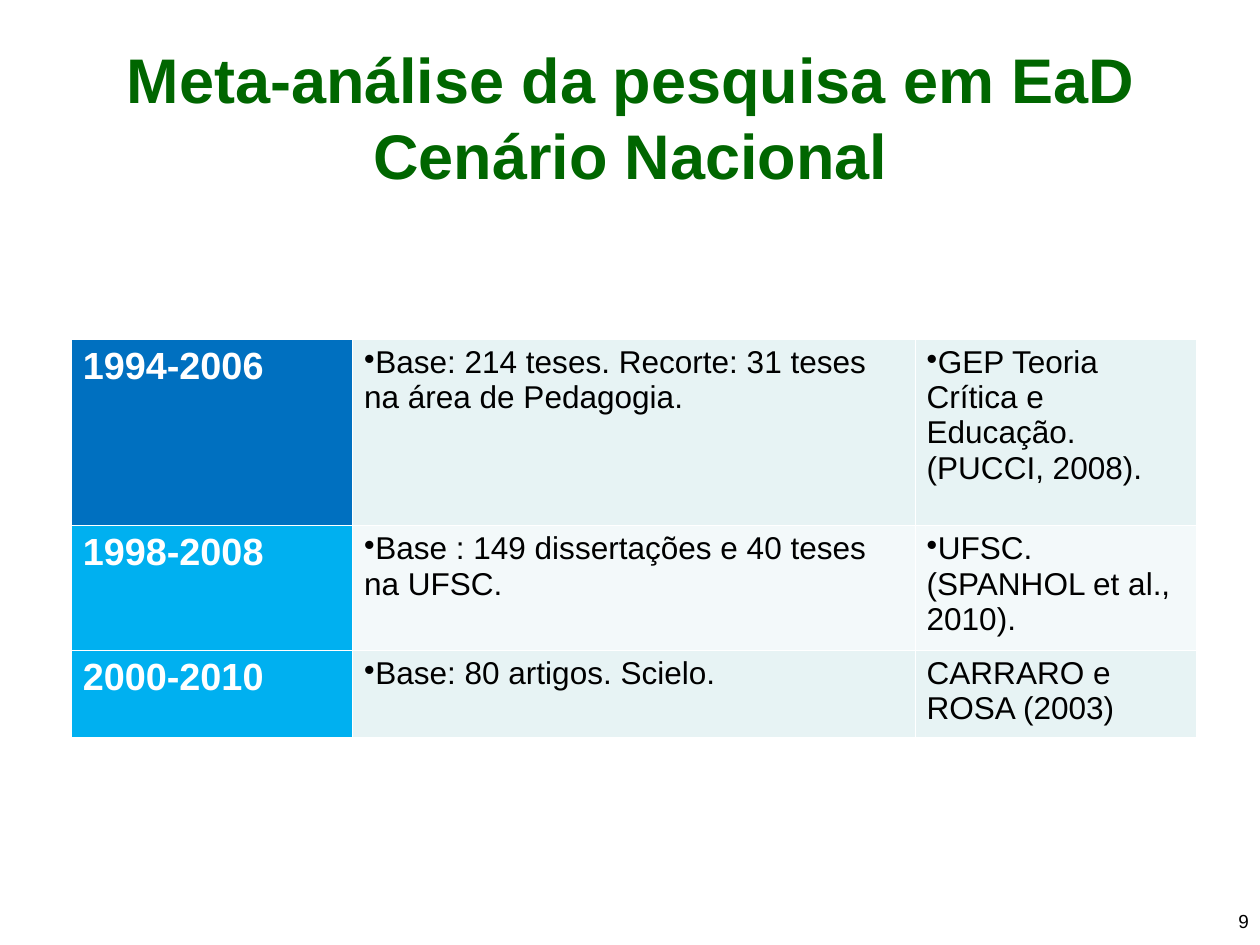
from lxml.etree import SubElement
from pptx import Presentation
from pptx.dml.color import RGBColor
from pptx.enum.text import MSO_ANCHOR, PP_ALIGN
from pptx.oxml.ns import qn
from pptx.util import Cm, Pt

COLORS = {
    "title": "006600", "text": "000000", "white": "FFFFFF",
    "dark_blue": "0070C0", "light_blue": "00B0F0",
    "band": "E7F3F4", "pale_band": "F3F9FA",
}
COLUMN_SHARES = (1, 2, 1)
# height, period fill, band fill, texts; a leading • becomes a real bullet
ROWS = [
    (4.17, "dark_blue", "band",
     ("1994-2006", "•Base: 214 teses. Recorte: 31 teses na área de Pedagogia.",
      "•GEP Teoria Crítica e Educação. (PUCCI, 2008).")),
    (2.62, "light_blue", "pale_band",
     ("1998-2008", "•Base : 149 dissertações e 40 teses na UFSC.",
      "•UFSC. (SPANHOL et al., 2010).")),
    (1.83, "light_blue", "band",
     ("2000-2010", "•Base: 80 artigos. Scielo.", "CARRARO e ROSA (2003)")),
]


def rgb(name):
    return RGBColor.from_string(COLORS[name])


def set_font(p, size, color, bold=False):
    font = p.font
    font.name, font.size, font.bold = "Arial", Pt(size), bold
    font.color.rgb = rgb(color)


def add_text(s, box, text, size, color, align, bold=False, anchor=MSO_ANCHOR.TOP):
    tf = s.shapes.add_textbox(*map(Cm, box)).text_frame
    tf.word_wrap = True
    tf.vertical_anchor = anchor
    p = tf.paragraphs[0]
    p.text, p.alignment = text, align
    set_font(p, size, color, bold)


def add_borders(cell):
    """Draw thin white lines on all four sides, ahead of the cell fill."""
    tc_pr = cell._tc.get_or_add_tcPr()
    for i, side in enumerate(("a:lnL", "a:lnR", "a:lnT", "a:lnB")):
        ln = SubElement(tc_pr, qn(side), w=str(Pt(1)))
        fill = SubElement(ln, qn("a:solidFill"))
        SubElement(fill, qn("a:srgbClr"), val=COLORS["white"])
        tc_pr.insert(i, ln)


def fill_cell(cell, text, fill, size, color, bold):
    add_borders(cell)
    cell.fill.solid()
    cell.fill.fore_color.rgb = rgb(fill)
    p = cell.text_frame.paragraphs[0]
    p.text = text.removeprefix("•")
    if text.startswith("•"):
        SubElement(p._p.get_or_add_pPr(), qn("a:buChar"), char="•")
    set_font(p, size, color, bold)


def add_research_table(s, left, top, width):
    height = sum(row[0] for row in ROWS)
    table = s.shapes.add_table(len(ROWS), len(COLUMN_SHARES),
                               *map(Cm, (left, top, width, height))).table
    for column, share in zip(table.columns, COLUMN_SHARES):
        column.width = Cm(width * share / sum(COLUMN_SHARES))
    for r, (row_height, period_fill, band_fill, texts) in enumerate(ROWS):
        table.rows[r].height = Cm(row_height)
        for c, text in enumerate(texts):
            style = (band_fill, 20, "text", False) if c else (period_fill, 24, "white", True)
            fill_cell(table.cell(r, c), text, *style)


def main():
    prs = Presentation()
    prs.slide_width, prs.slide_height = Cm(28.22), Cm(21.16)
    s = prs.slides.add_slide(prs.slide_layouts[6])
    add_text(s, (21.64, 20.24, 6.58, 1.47), "9", 12, "text", PP_ALIGN.RIGHT)
    add_text(s, (1.42, 0.84, 25.4, 3.53),
             "Meta-análise da pesquisa em EaD Cenário Nacional", 40, "title",
             PP_ALIGN.CENTER, bold=True, anchor=MSO_ANCHOR.MIDDLE)
    add_research_table(s, 1.6, 7.6, 25.2)
    prs.save("out.pptx")


if __name__ == "__main__":
    main()
